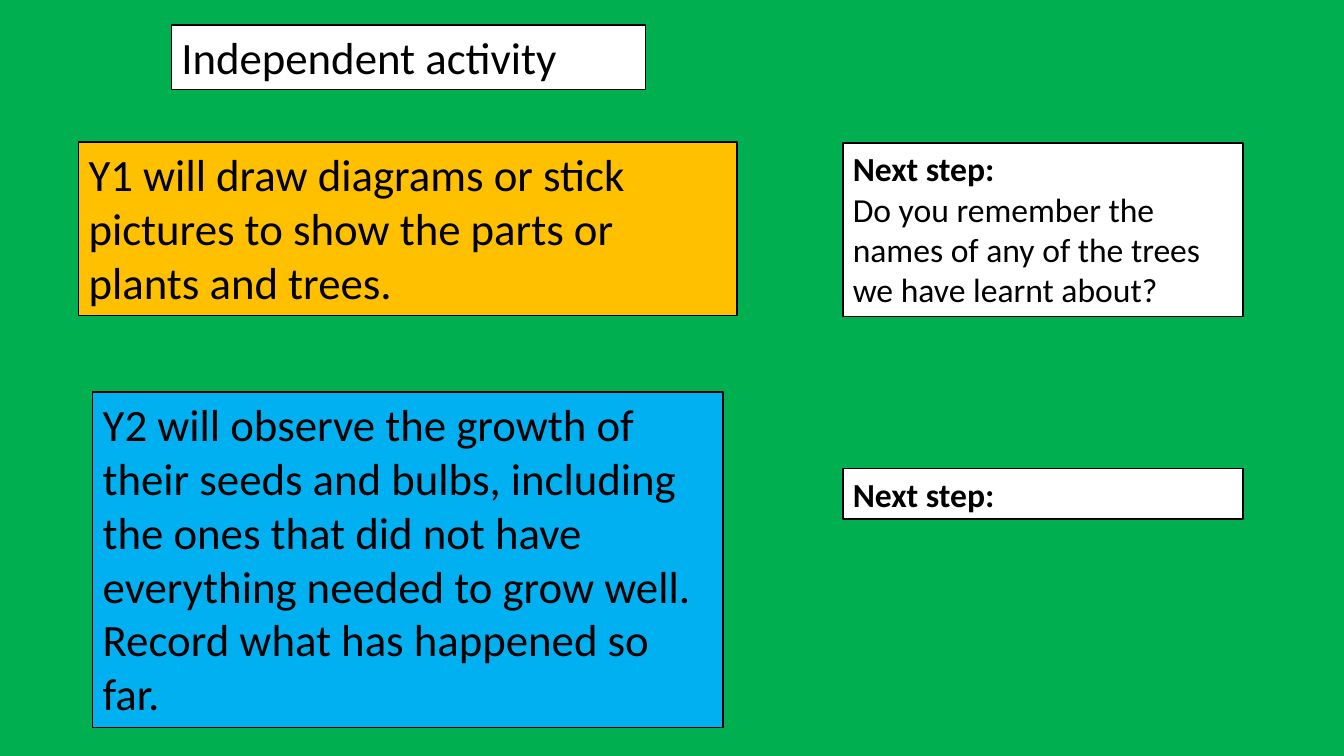
from pptx import Presentation
from pptx.dml.color import RGBColor
from pptx.enum import text
from pptx.util import Inches, Pt

HUES = {
    "green": "00B050",
    "amber": "FFC000",
    "blue": "00B0F0",
    "white": "FFFFFF",
    "black": "000000",
}


def color(name):
    return RGBColor.from_string(HUES[name])


deck = Presentation()
deck.slide_width, deck.slide_height = Inches(13.33), Inches(7.5)
slide = deck.slides.add_slide(deck.slide_layouts[6])
slide.background.fill.solid()
slide.background.fill.fore_color.rgb = color("green")

HEAD = "Next step:"
year1 = "Y1 will draw diagrams or stick pictures to show the parts or plants and trees."
year2 = (
    "Y2 will observe the growth of their seeds and bulbs, including "
    "the ones that did not have everything needed to grow well.\n"
    "Record what has happened so far."
)
trees = HEAD + "\nDo you remember the names of any of the trees we have learnt about?"

# left, top, width, height, fill, font size, words
boxes = [
    (0.78, 1.41, 6.53, 1.72, "amber", 32, year1),
    (0.92, 3.89, 6.25, 3.33, "blue", 32, year2),
    (1.7, 0.25, 4.7, 0.64, "white", 32, "Independent activity"),
    (8.36, 4.65, 3.97, 0.5, "white", 24, HEAD),
    (8.36, 1.42, 3.97, 1.72, "white", 24, trees),
]

for left, top, width, height, fill, size, words in boxes:
    box = slide.shapes.add_textbox(
        Inches(left), Inches(top), Inches(width), Inches(height)
    )
    box.fill.solid()
    box.fill.fore_color.rgb = color(fill)
    box.line.color.rgb = color("black")
    box.line.width = Pt(1)
    frame = box.text_frame
    frame.word_wrap = True
    frame.auto_size = text.MSO_AUTO_SIZE.SHAPE_TO_FIT_TEXT
    frame.text = words
    for para in frame.paragraphs:
        for run in para.runs:
            run.font.name = "Calibri"
            run.font.size = Pt(size)
            run.font.bold = run.text == HEAD
            run.font.color.rgb = color("black")

deck.save("out.pptx")
